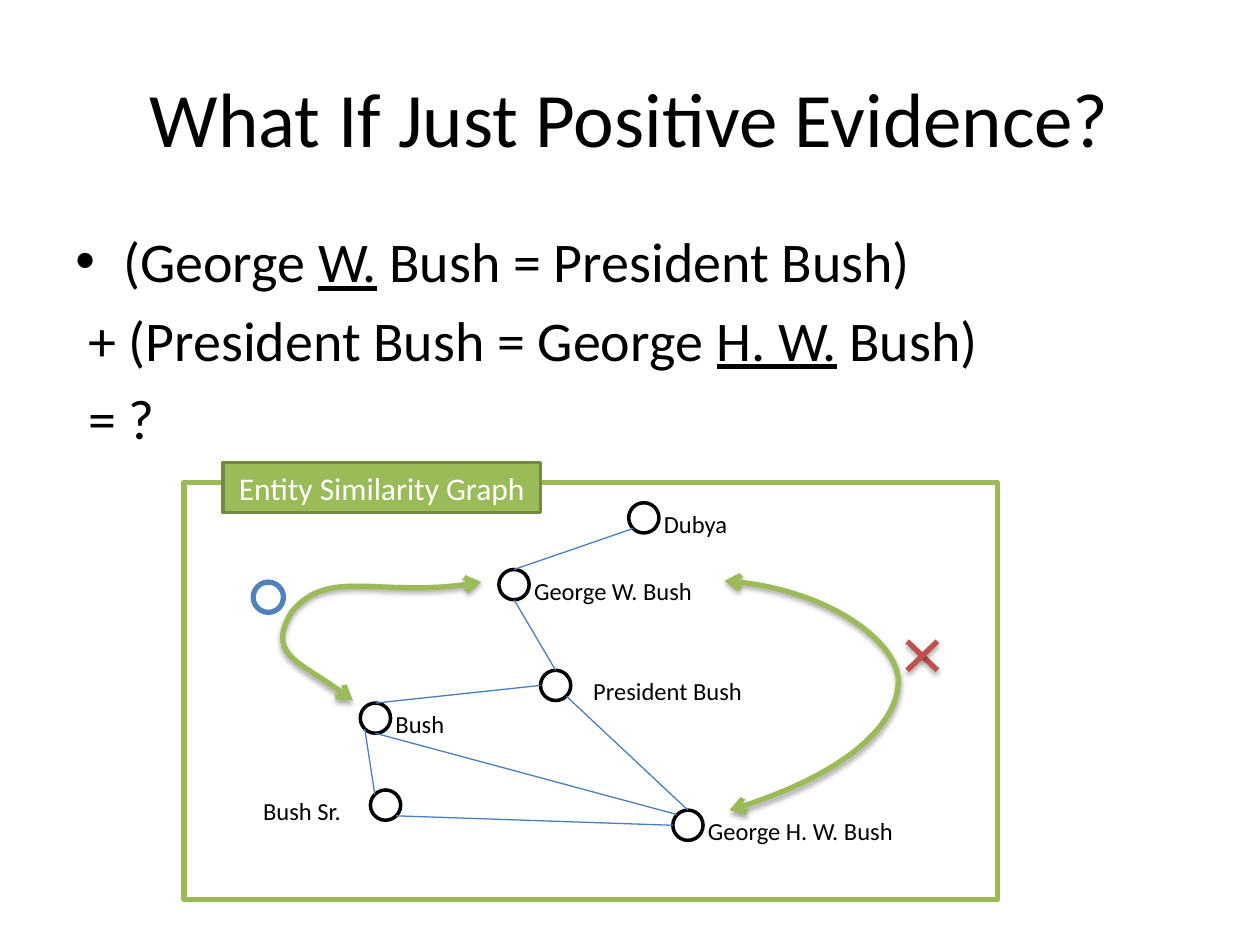
from math import cos, radians, sin
from typing import NamedTuple

from lxml.etree import SubElement
from pptx import Presentation
from pptx.dml.color import RGBColor
from pptx.enum.shapes import MSO_CONNECTOR as Link, MSO_SHAPE as Kind
from pptx.enum.text import MSO_ANCHOR as Anchor, PP_ALIGN as Align
from pptx.oxml.ns import qn
from pptx.util import Inches, Pt

BLACK = RGBColor(0x00, 0x00, 0x00)
WHITE = RGBColor(0xFF, 0xFF, 0xFF)
GREEN = RGBColor(0x9B, 0xBB, 0x59)
OLIVE = RGBColor(0x73, 0x8A, 0x42)
BLUE = RGBColor(0x4F, 0x81, 0xBD)
STEEL = RGBColor(0x4B, 0x7E, 0xBC)
RED = RGBColor(0xC0, 0x50, 0x4D)
FONT = "Calibri"
SIZE = 0.24  # circle diameter in inches

# Points on a circle, counted in eighths of a turn leftwards from the top
TOP, TOP_LEFT, LEFT, LOW_LEFT, LOW, LOW_RIGHT = range(6)

Point = tuple[float, float]


class Node(NamedTuple):
    name: str
    x: float
    y: float
    shift: float = 0.18
    width: float = 1.51

    def site(self, turn: int) -> Point:
        """Point on the rim at the given eighth of a turn."""
        half, angle = SIZE / 2, radians(45 * turn)
        return (self.x + half * (1 - sin(angle)),
                self.y + half * (1 - cos(angle)))


class Edge(NamedTuple):
    start: Node
    out: int
    end: Node
    into: int


class Curve(NamedTuple):
    start: Point
    knots: list[Point]  # two controls and an end point for each arc


GEORGE_W = Node("George W. Bush", 3.96, 4.52)
DUBYA = Node("Dubya", 4.99, 3.99)
BUSH = Node("Bush", 2.86, 5.58)
SENIOR = Node("Bush Sr.", 2.94, 6.27, -0.95, 0.96)
PRESIDENT = Node("President Bush", 4.29, 5.32, 0.32)
GEORGE_HW = Node("George H. W. Bush", 5.34, 6.43, 0.18, 1.69)
NODES = [GEORGE_W, DUBYA, BUSH, SENIOR, PRESIDENT, GEORGE_HW]

EDGES = [
    Edge(SENIOR, TOP_LEFT, BUSH, LOW_LEFT),
    Edge(GEORGE_HW, TOP, PRESIDENT, LOW_RIGHT),
    Edge(GEORGE_HW, LEFT, SENIOR, LOW_RIGHT),
    Edge(GEORGE_W, LOW, PRESIDENT, TOP),
    Edge(BUSH, TOP, PRESIDENT, LEFT),
    Edge(GEORGE_W, TOP, DUBYA, LOW_LEFT),
    Edge(BUSH, LOW, GEORGE_HW, TOP_LEFT),
]

CURVES = [
    Curve((5.75, 4.61), [(6.55, 4.66), (7.12, 5.1), (7.13, 5.4),
                         (7.13, 5.71), (6.76, 6.14), (5.79, 6.43)]),
    Curve((3.82, 4.62), [(3.04, 4.76), (2.61, 4.51), (2.32, 4.85),
                         (2.11, 5.19), (2.42, 5.26), (2.8, 5.56)]),
]

# Underlined text is the middle part of each line
CLAIMS = [
    ("(George ", "W.", " Bush = President Bush)"),
    (" + (President Bush = George ", "H. W.", " Bush)"),
    (" = ?",),
]


def set_font(para, size: float, color: RGBColor = BLACK) -> None:
    para.font.name, para.font.size = FONT, Pt(size)
    para.font.color.rgb = color


def add_text(slide, x: float, y: float, w: float, h: float):
    frame = slide.shapes.add_textbox(*map(Inches, (x, y, w, h))).text_frame
    frame.word_wrap = True
    return frame


def add_box(slide, kind, x: float, y: float, w: float, h: float,
            line: RGBColor, width: float, fill: RGBColor | None = None):
    box = slide.shapes.add_shape(kind, *map(Inches, (x, y, w, h)))
    box.shadow.inherit = False
    if fill is None:
        box.fill.background()
    else:
        box.fill.solid()
        box.fill.fore_color.rgb = fill
    box.line.color.rgb, box.line.width = line, Pt(width)
    return box


def add_line(slide, start: Point, end: Point, color: RGBColor, width: float):
    line = slide.shapes.add_connector(
        Link.STRAIGHT, *map(Inches, (*start, *end)))
    line.line.color.rgb, line.line.width = color, Pt(width)
    SubElement(line._element.spPr, qn("a:effectLst"))
    return line


def add_shadow(shape) -> None:
    """Put a soft shadow below, in the shape's empty effect list."""
    effects = shape._element.spPr.find(qn("a:effectLst"))
    shade = SubElement(effects, qn("a:outerShdw"), blurRad=str(Pt(3.1)),
                       dist=str(Pt(1.8)), dir="5400000", rotWithShape="0")
    tint = SubElement(shade, qn("a:srgbClr"), val="000000")
    SubElement(tint, qn("a:alpha"), val="35000")


def add_curve(slide, curve: Curve) -> None:
    """Draw a double-headed arrow of cubic arcs."""
    draft = slide.shapes.build_freeform(*map(Inches, curve.start))
    draft.add_line_segments(
        [(Inches(x), Inches(y)) for x, y in curve.knots], close=False)
    shape = draft.convert_to_shape()
    shape.shadow.inherit = False
    shape.fill.background()
    shape.line.color.rgb, shape.line.width = GREEN, Pt(3)
    route = shape._element.spPr.find(".//" + qn("a:path"))
    steps = route.findall(qn("a:lnTo"))
    for i in range(0, len(steps), 3):
        arc = SubElement(route, qn("a:cubicBezTo"))
        for step in steps[i:i + 3]:
            arc.append(step[0])
            route.remove(step)
    stroke = shape._element.spPr.find(qn("a:ln"))
    for end in ("a:headEnd", "a:tailEnd"):
        SubElement(stroke, qn(end), type="arrow")
    add_shadow(shape)


def add_node(slide, node: Node) -> None:
    add_box(slide, Kind.OVAL, node.x, node.y, SIZE, SIZE, BLACK, 2, WHITE)
    frame = add_text(slide, node.x + node.shift, node.y, node.width, 0.34)
    para = frame.paragraphs[0]
    para.text = node.name
    set_font(para, 14)


def add_claims(slide) -> None:
    frame = add_text(slide, 0.5, 1.75, 9, 4.95)
    for i, parts in enumerate(CLAIMS):
        para = frame.add_paragraph() if i else frame.paragraphs[0]
        props = para._p.get_or_add_pPr()
        props.set("marL", str(Inches(0.38)))
        props.set("indent", str(Inches(-0.38)))
        if i:
            para.space_before = Pt(6.4)
            SubElement(props, qn("a:buNone"))
        else:
            SubElement(props, qn("a:buFont"), typeface="Arial")
            SubElement(props, qn("a:buChar"), char="•")
        set_font(para, 32)
        for j, part in enumerate(parts):
            run = para.add_run()
            run.text = part
            if j == 1:
                run.font.underline = True


def main() -> None:
    deck = Presentation()
    deck.slide_width, deck.slide_height = Inches(10), Inches(7.5)
    slide = deck.slides.add_slide(deck.slide_layouts[6])

    frame = add_text(slide, 0.5, 0.3, 9, 1.25)
    frame.vertical_anchor = Anchor.MIDDLE
    title = frame.paragraphs[0]
    title.text, title.alignment = "What If Just Positive Evidence?", Align.CENTER
    set_font(title, 44)
    add_claims(slide)

    for node in NODES:
        add_node(slide, node)
    for edge in EDGES:
        add_line(slide, edge.start.site(edge.out), edge.end.site(edge.into),
                 STEEL, 0.75)
    for curve in CURVES:
        add_curve(slide, curve)

    add_box(slide, Kind.OVAL, 2.01, 4.62, SIZE, SIZE, BLUE, 3, WHITE)
    for y, end in ((5.09, 5.32), (5.32, 5.09)):
        add_shadow(add_line(slide, (7.2, y), (7.44, end), RED, 3))

    add_box(slide, Kind.RECTANGLE, 1.46, 3.83, 6.46, 3.31, GREEN, 3)
    label = add_box(slide, Kind.RECTANGLE, 1.77, 3.67, 2.52, 0.4,
                    OLIVE, 2, GREEN)
    para = label.text_frame.paragraphs[0]
    para.text, para.alignment = "Entity Similarity Graph", Align.CENTER
    set_font(para, 18, WHITE)
    deck.save("out.pptx")


if __name__ == "__main__":
    main()
